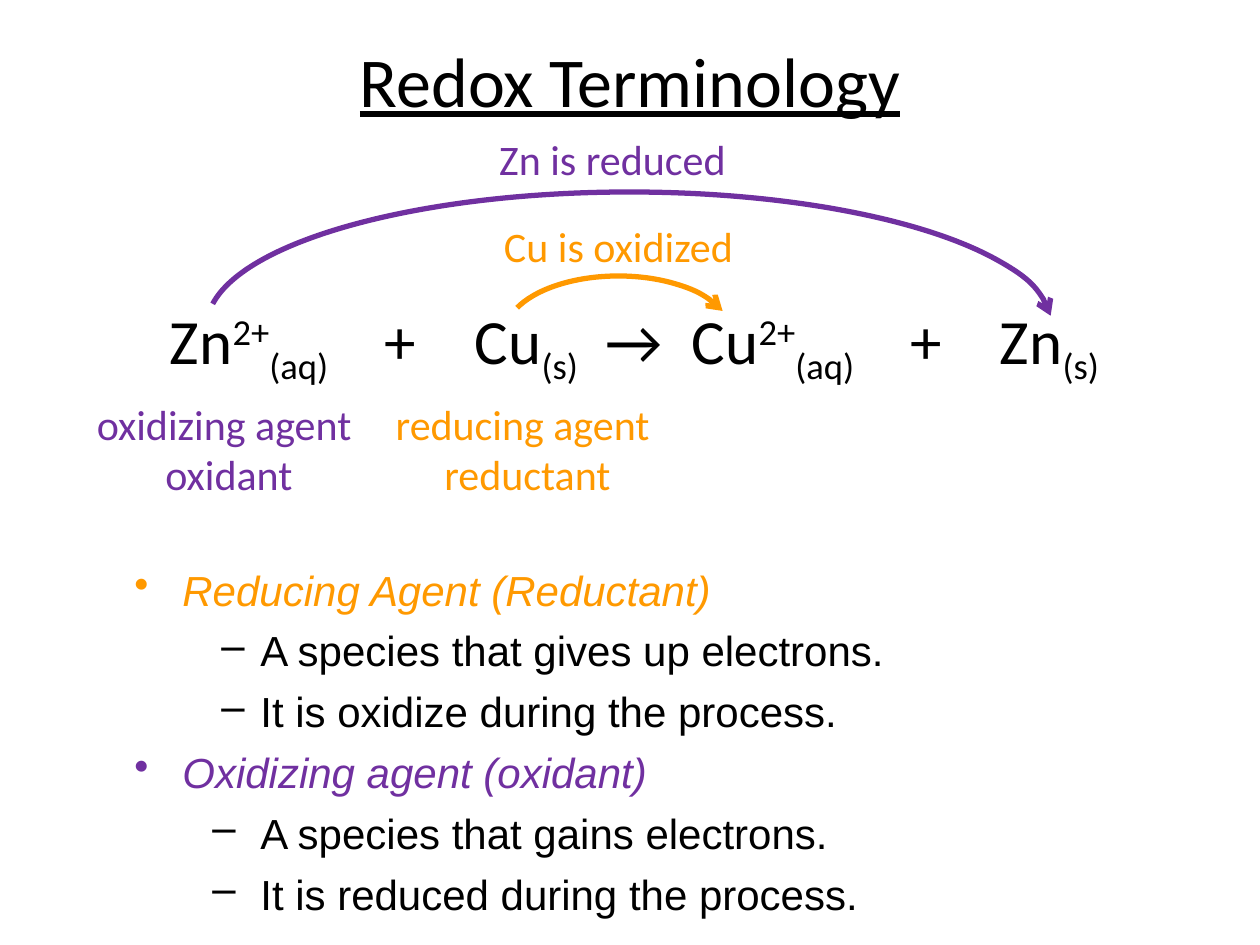
import pptx
import pptx.dml.color
import pptx.enum.shapes
import pptx.enum.text
import pptx.oxml
import pptx.oxml.ns
import pptx.util

PURPLE, ORANGE, BLACK = "7030A0", "FF9900", "000000"
CENTER = pptx.enum.text.PP_ALIGN.CENTER
MIDDLE = pptx.enum.text.MSO_ANCHOR.MIDDLE


def px(n):
    """Turn px into EMU at 126 px to the inch."""
    return pptx.util.Emu(round(n * 914400 / 126))


def paint(code):
    """Turn a hex string into a colour."""
    return pptx.dml.color.RGBColor.from_string(code)


def node(parent, tag, **attrs):
    """Append a drawing element with the given attributes."""
    child = pptx.oxml.parse_xml(f'<a:{tag} {pptx.oxml.ns.nsdecls("a")}/>')
    for key, value in attrs.items():
        child.set(key, str(value))
    parent.append(child)
    return child


def style(para, size, color, face="Calibri"):
    """Set the font of a whole paragraph."""
    font = para.font
    font.name, font.size = face, pptx.util.Pt(size)
    font.color.rgb = paint(color)
    return font


def frame(slide, box, wrap=True):
    """Add a text box and return its text frame."""
    text = slide.shapes.add_textbox(*map(px, box)).text_frame
    text.word_wrap = wrap
    return text


def label(slide, box, lines, size, color, wrap=True):
    """Write centred lines and return the text frame."""
    text = frame(slide, box, wrap)
    for i, line in enumerate(lines):
        para = text.add_paragraph() if i else text.paragraphs[0]
        para.text, para.alignment = line, CENTER
        style(para, size, color)
    return text


def title(slide, box):
    """Write the underlined heading."""
    text = label(slide, box, ["Redox Terminology"], 40, BLACK)
    text.vertical_anchor = MIDDLE
    text.paragraphs[0].font.underline = True


def formula(slide, box):
    """Write the reaction, its terms set on tab stops."""
    text = frame(slide, box)
    text.vertical_anchor = MIDDLE
    text.margin_left, text.margin_right = px(58), 0
    para = text.paragraphs[0]
    tabs = node(para._p.get_or_add_pPr(), "tabLst")
    for stop in (215, 305, 436, 522, 741, 830):
        node(tabs, "tab", pos=px(stop), algn="l")
    style(para, 36, BLACK)
    up, down = 30000, -25000
    parts = [("Zn", 0), ("2+", up), ("(aq)", down), ("\t+\tCu", 0),
             ("(s)", down), ("\t→\tCu", 0), ("2+", up), ("(aq)", down),
             ("\t+\tZn", 0), ("(s)", down)]
    for word, shift in parts:
        run = para.add_run()
        run.text = word
        if shift:
            run._r.get_or_add_rPr().set("baseline", str(shift))


def arc(slide, box, start, end, color):
    """Draw an arc between two angles with an arrowhead at its end."""
    kind = pptx.enum.shapes.MSO_SHAPE.ARC
    shape = slide.shapes.add_shape(kind, *map(px, box))
    shape.shadow.inherit = False
    shape.fill.background()
    for i, angle in enumerate((start, end)):
        shape.adjustments[i] = angle * 0.6
    shape.line.color.rgb = paint(color)
    shape.line.width = pptx.util.Pt(3)
    node(shape.line._get_or_add_ln(), "tailEnd", type="arrow")


def terms(slide, box):
    """List both agents with their traits."""
    text = frame(slide, box)
    text.margin_top = px(10)
    groups = [
        ("Reducing Agent (Reductant)", ORANGE, 39,
         ["A species that gives up electrons.",
          "It is oxidize during the process."]),
        ("Oxidizing agent (oxidant)", PURPLE, 48,
         ["A species that gains electrons.",
          "It is reduced during the process."]),
    ]
    rows = []
    for head, color, hang, traits in groups:
        rows.append((head, color, 0, 48, 48, "•"))
        rows += [(trait, BLACK, 1, 126, hang, "–") for trait in traits]
    for i, (line, color, level, left, hang, mark) in enumerate(rows):
        para = text.add_paragraph() if i else text.paragraphs[0]
        para.text, para.level = line, level
        if i:
            para.space_before = pptx.util.Pt(6)
        props = para._p.get_or_add_pPr()
        props.set("marL", str(px(left)))
        props.set("indent", str(-px(hang)))
        node(props, "buChar", char=mark)
        style(para, 24, color, "Arial").italic = level == 0


def main():
    """Build the slide and save it."""
    deck = pptx.Presentation()
    deck.slide_width, deck.slide_height = px(1260), px(945)
    slide = deck.slides.add_slide(deck.slide_layouts[6])
    terms(slide, (122, 554, 1113, 399))
    title(slide, (0, 0, 1260, 158))
    formula(slide, (112, 277, 1045, 134))
    arc(slide, (207, 192, 845, 268), 183.04, 358.6, PURPLE)
    label(slide, (436, 127, 353, 63), ["Zn is reduced"], 24, PURPLE)
    arc(slide, (505, 276, 227, 116), 194.5, 347.55, ORANGE)
    label(slide, (442, 214, 353, 63), ["Cu is oxidized"], 24, ORANGE)
    label(slide, (83, 392, 292, 115), ["oxidizing agent ", "oxidant"],
          24, PURPLE, False)
    label(slide, (382, 392, 291, 115), ["reducing agent ", "reductant"],
          24, ORANGE, False)
    deck.save("out.pptx")


if __name__ == "__main__":
    main()
